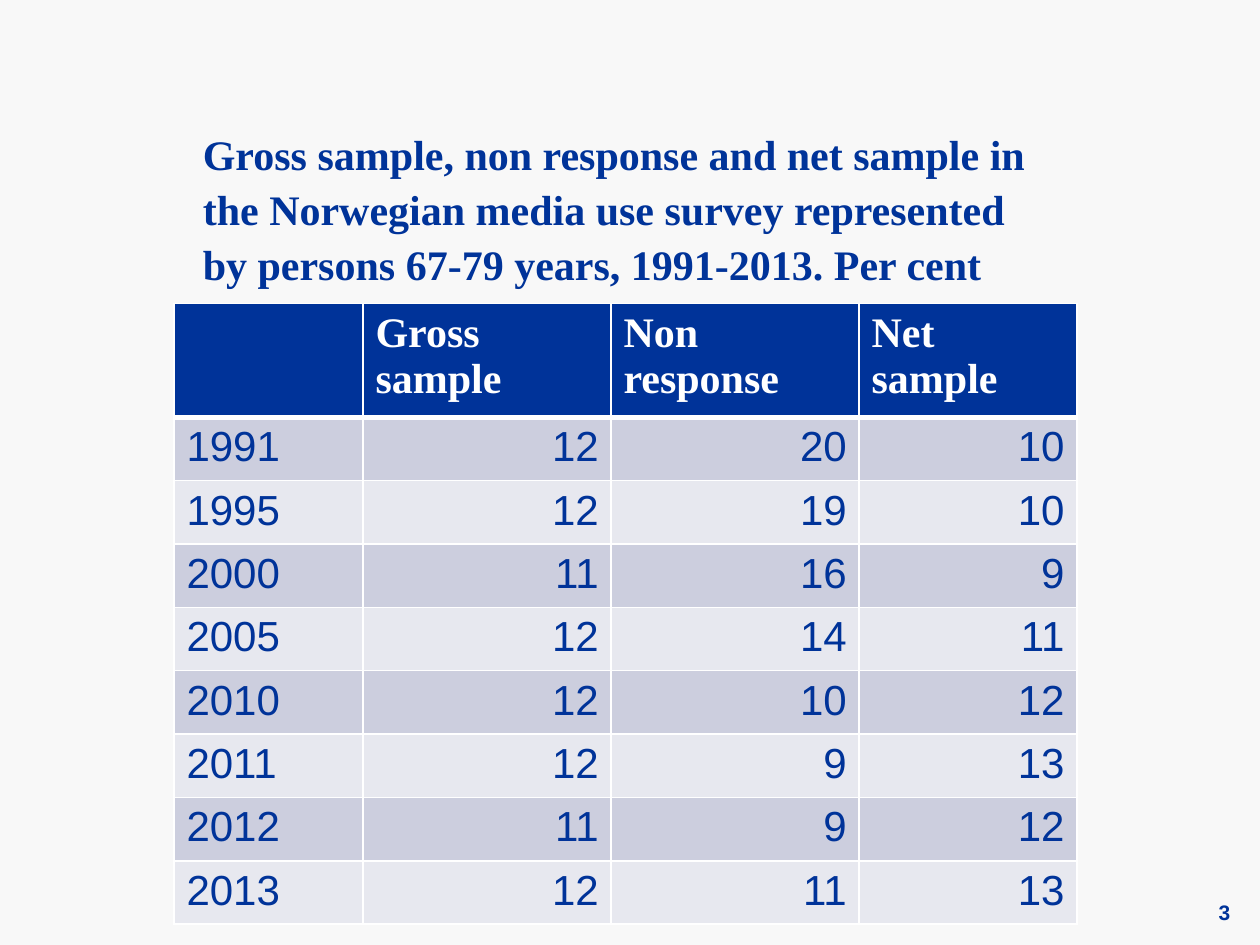
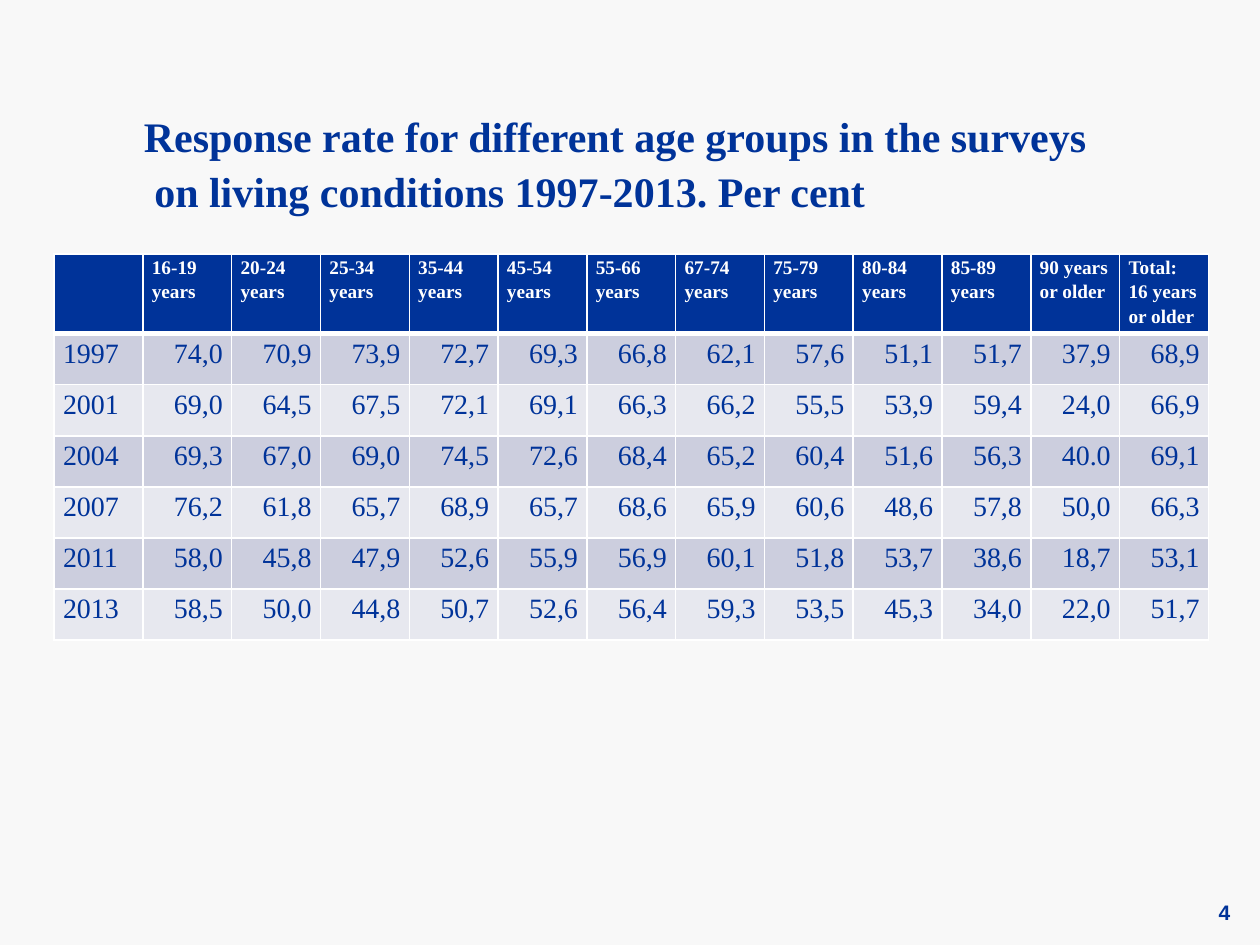
"""Build two slides with tables on survey samples and response rates."""
import lxml.etree
import pptx
import pptx.dml.color
import pptx.enum.text
import pptx.oxml.ns
import pptx.util

Cm = pptx.util.Cm
Pt = pptx.util.Pt
RGBColor = pptx.dml.color.RGBColor
Align = pptx.enum.text.PP_ALIGN
Anchor = pptx.enum.text.MSO_ANCHOR

BACKGROUND = RGBColor(0xF8, 0xF8, 0xF8)
NAVY = RGBColor(0x00, 0x33, 0x99)
WHITE = RGBColor(0xFF, 0xFF, 0xFF)
BANDS = (RGBColor(0xCC, 0xCE, 0xDE), RGBColor(0xE7, 0xE8, 0xEF))
SERIF = "Times New Roman"
SANS = "Arial"
ROW_HEIGHT = 1.03

SURVEYS = [
    {
        "number": "3",
        "title": "Gross sample, non response and net sample in\n"
                 "the Norwegian media use survey represented\n"
                 "by persons 67-79 years, 1991-2013. Per cent",
        "title_box": (4.09, 2.51, 16.99, 2.34),
        "corner": (3.51, 6.12),
        "widths": [3.81, 5, 5, 4.39],
        "margins": (0.25, 0.13),
        "header_format": {"size": 24},
        "body_format": {"size": 24, "font": SANS},
        "header": ["", "Gross sample", "Non response", "Net sample"],
        "years": [
            ("1991", "12", "20", "10"),
            ("1995", "12", "19", "10"),
            ("2000", "11", "16", "9"),
            ("2005", "12", "14", "11"),
            ("2010", "12", "10", "12"),
            ("2011", "12", "9", "13"),
            ("2012", "11", "9", "12"),
            ("2013", "12", "11", "13"),
        ],
    },
    {
        "number": "4",
        "title": "Response rate for different age groups in the surveys\n"
                 " on living conditions 1997-2013. Per cent",
        "title_box": (2.9, 2.13, 19.23, 2.34),
        "corner": (1.09, 5.12),
        "widths": [1.79] * 13,
        "margins": (0.18, 0),
        "header_format": {"size": 11, "spacing": 1.15},
        "body_format": {"size": 16, "spacing": 1.15},
        "header": ["", "16-19 years", "20-24 years", "25-34 years", "35-44 years",
                   "45-54 years", "55-66 years", "67-74 years", "75-79 years",
                   "80-84 years", "85-89 years", "90 years or older",
                   "Total: 16 years or older"],
        "years": [
            ("1997", "74,0", "70,9", "73,9", "72,7", "69,3", "66,8",
             "62,1", "57,6", "51,1", "51,7", "37,9", "68,9"),
            ("2001", "69,0", "64,5", "67,5", "72,1", "69,1", "66,3",
             "66,2", "55,5", "53,9", "59,4", "24,0", "66,9"),
            ("2004", "69,3", "67,0", "69,0", "74,5", "72,6", "68,4",
             "65,2", "60,4", "51,6", "56,3", "40.0", "69,1"),
            ("2007", "76,2", "61,8", "65,7", "68,9", "65,7", "68,6",
             "65,9", "60,6", "48,6", "57,8", "50,0", "66,3"),
            ("2011", "58,0", "45,8", "47,9", "52,6", "55,9", "56,9",
             "60,1", "51,8", "53,7", "38,6", "18,7", "53,1"),
            ("2013", "58,5", "50,0", "44,8", "50,7", "52,6", "56,4",
             "59,3", "53,5", "45,3", "34,0", "22,0", "51,7"),
        ],
    },
]


def write(frame, text, size, font=SERIF, color=NAVY, bold=False,
          align=Align.LEFT, spacing=None):
    paragraph = frame.paragraphs[0]
    paragraph.text = text
    paragraph.alignment = align
    paragraph.line_spacing = spacing
    for run in paragraph.runs:
        run.font.size = Pt(size)
        run.font.name = font
        run.font.bold = bold
        run.font.color.rgb = color


def add_text(slide, box, text, anchor=Anchor.TOP, **text_format):
    frame = slide.shapes.add_textbox(*map(Cm, box)).text_frame
    frame.word_wrap = True
    frame.vertical_anchor = anchor
    frame.margin_left = frame.margin_right = 0
    frame.margin_top = frame.margin_bottom = 0
    write(frame, text, **text_format)


def set_borders(cell, top=1, bottom=1):
    qn = pptx.oxml.ns.qn
    properties = cell._tc.get_or_add_tcPr()
    sides = (("a:lnL", 1), ("a:lnR", 1), ("a:lnT", top), ("a:lnB", bottom))
    for place, (side, width) in enumerate(sides):
        line = lxml.etree.Element(qn(side), w=str(Pt(width)))
        fill = lxml.etree.SubElement(line, qn("a:solidFill"))
        lxml.etree.SubElement(fill, qn("a:srgbClr"), val=str(WHITE))
        properties.insert(place, line)


def add_survey_table(slide, survey):
    rows = [survey["header"], *survey["years"]]
    widths = survey["widths"]
    left, top = survey["corner"]
    table = slide.shapes.add_table(
        len(rows), len(widths), Cm(left), Cm(top),
        Cm(sum(widths)), Cm(ROW_HEIGHT * len(rows))).table
    for column, width in zip(table.columns, widths):
        column.width = Cm(width)
    side_margin, end_margin = map(Cm, survey["margins"])
    for r, values in enumerate(rows):
        table.rows[r].height = Cm(ROW_HEIGHT)
        for c, value in enumerate(values):
            cell = table.cell(r, c)
            cell.margin_left = cell.margin_right = side_margin
            cell.margin_top = cell.margin_bottom = end_margin
            cell.fill.solid()
            cell.fill.fore_color.rgb = BANDS[(r - 1) % 2] if r else NAVY
            set_borders(cell, top=3 if r == 1 else 1, bottom=1 if r else 3)
            if r == 0:
                write(cell.text_frame, value, color=WHITE, bold=True,
                      **survey["header_format"])
            else:
                write(cell.text_frame, value, align=Align.RIGHT if c else Align.LEFT,
                      **survey["body_format"])


def add_survey_slide(deck, survey):
    slide = deck.slides.add_slide(deck.slide_layouts[6])
    slide.background.fill.solid()
    slide.background.fill.fore_color.rgb = BACKGROUND
    add_text(slide, survey["title_box"], survey["title"],
             size=24, bold=True, spacing=1.09)
    add_survey_table(slide, survey)
    add_text(slide, (23.5, 18.06, 1.3, 0.66), survey["number"], anchor=Anchor.MIDDLE,
             size=12, font=SANS, bold=True, align=Align.RIGHT)


def main():
    deck = pptx.Presentation()
    deck.slide_width, deck.slide_height = Cm(25.4), Cm(19.05)
    for survey in SURVEYS:
        add_survey_slide(deck, survey)
    deck.save("out.pptx")


if __name__ == "__main__":
    main()
